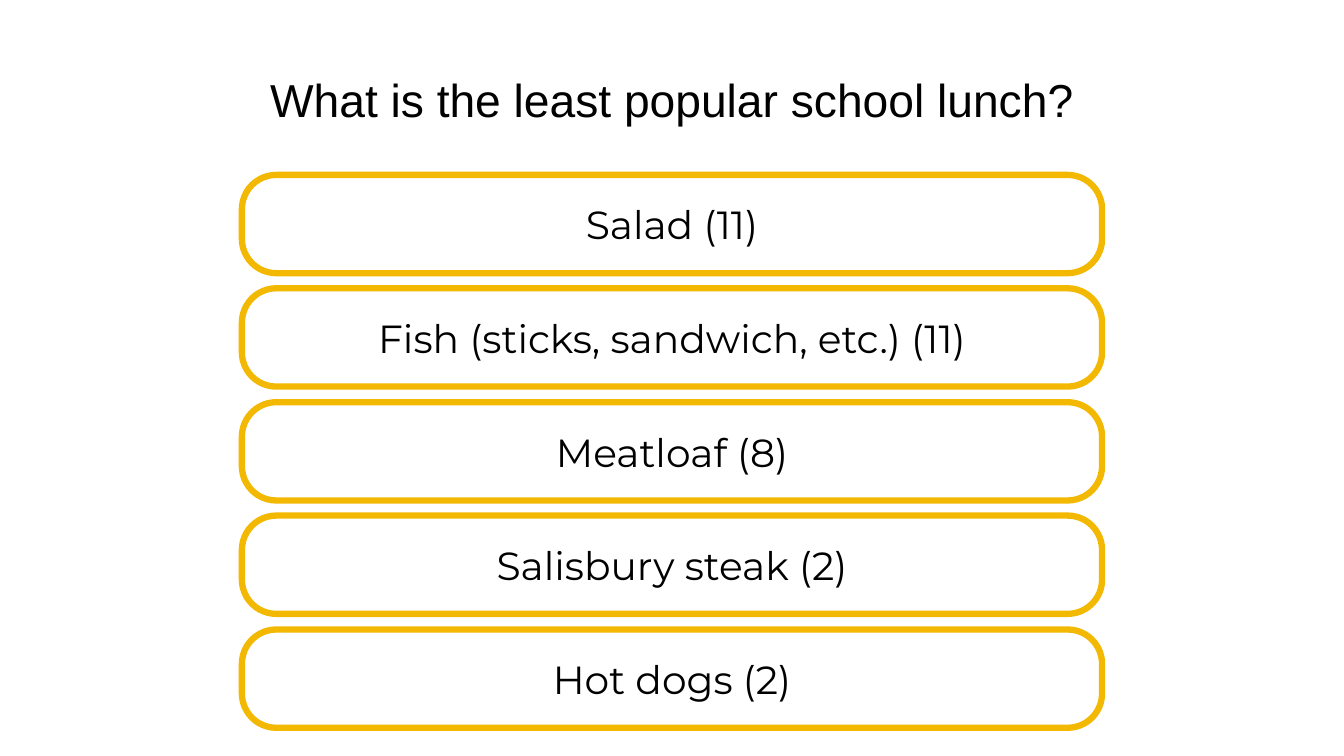
from pptx import Presentation
from pptx.dml.color import RGBColor
from pptx.enum.shapes import MSO_SHAPE as Shape
from pptx.enum.text import MSO_ANCHOR as Anchor, PP_ALIGN as Align
from pptx.util import Emu, Pt

EMU_PER_PX = 9144  # 100 px to the inch
SLIDE_WIDTH, SLIDE_HEIGHT = 2667, 1500

# Shared column and the vertical run of the answer boxes
COLUMN_LEFT, COLUMN_WIDTH = 480, 1707
FIRST_TOP, LAST_TOP, ANSWER_HEIGHT = 347, 1249, 195
TEXT_INSET = 8

QUESTION = "What is the least popular school lunch?"
ANSWERS = [
    "Salad (11)",
    "Fish (sticks, sandwich, etc.) (11)",
    "Meatloaf (8)",
    "Salisbury steak (2)",
    "Hot dogs (2)",
]


def px(length):
    return Emu(length * EMU_PER_PX)


def color(hex_string):
    return RGBColor.from_string(hex_string)


def write_text(shape, text, *, font, size, fill="000000"):
    frame = shape.text_frame
    frame.word_wrap = True
    frame.vertical_anchor = Anchor.MIDDLE
    frame.margin_left = frame.margin_right = px(TEXT_INSET)
    frame.margin_top = frame.margin_bottom = px(TEXT_INSET)
    paragraph = frame.paragraphs[0]
    paragraph.alignment = Align.CENTER
    run = paragraph.add_run()
    run.text = text
    run.font.name = font
    run.font.size = Pt(size)
    run.font.color.rgb = color(fill)


def add_question(slide, text):
    box = slide.shapes.add_textbox(px(COLUMN_LEFT), px(39), px(COLUMN_WIDTH), px(316))
    write_text(box, text, font="Arial", size=66)


def add_answer(slide, text, top):
    shape = slide.shapes.add_shape(
        Shape.ROUNDED_RECTANGLE,
        px(COLUMN_LEFT), px(top), px(COLUMN_WIDTH), px(ANSWER_HEIGHT),
    )
    shape.adjustments[0] = 0.35
    shape.shadow.inherit = False
    shape.fill.solid()
    shape.fill.fore_color.rgb = color("FFFFFF")
    shape.line.color.rgb = color("F3B802")
    shape.line.width = Pt(9)
    write_text(shape, text, font="Montserrat", size=56)


def main():
    presentation = Presentation()
    presentation.slide_width = px(SLIDE_WIDTH)
    presentation.slide_height = px(SLIDE_HEIGHT)
    slide = presentation.slides.add_slide(presentation.slide_layouts[6])

    # Question
    add_question(slide, QUESTION)

    # Answers, evenly spread from the first top to the last
    step = (LAST_TOP - FIRST_TOP) / (len(ANSWERS) - 1)
    for index, answer in enumerate(ANSWERS):
        add_answer(slide, answer, int(FIRST_TOP + index * step))

    presentation.save("out.pptx")


if __name__ == "__main__":
    main()
